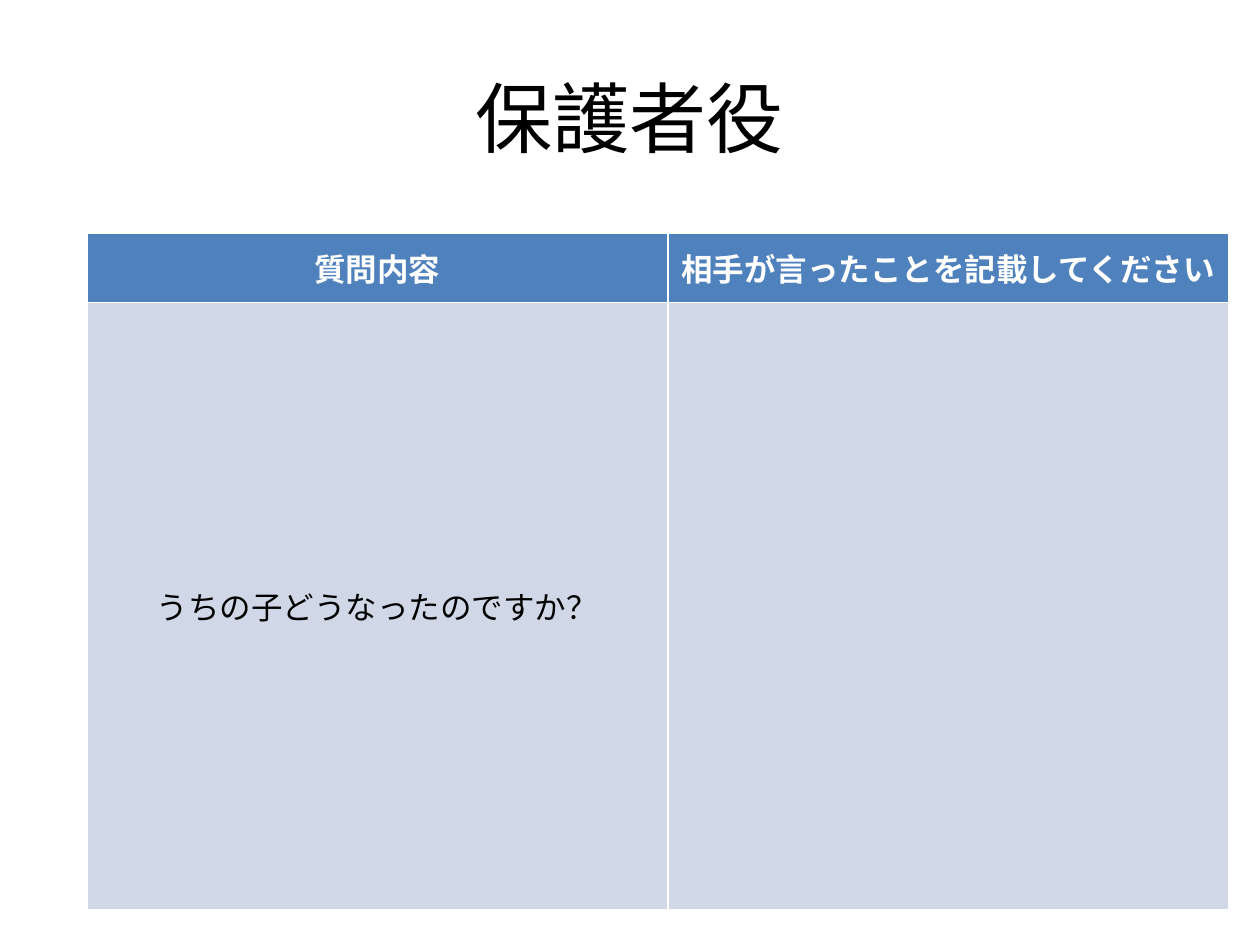
from dataclasses import dataclass

from pptx import Presentation
from pptx.dml.color import RGBColor
from pptx.enum.text import MSO_ANCHOR, PP_ALIGN
from pptx.util import Inches, Pt

TITLE = "保護者役"
ROWS = [
    ("質問内容", "相手が言ったことを記載してください"),
    ("うちの子どうなったのですか？", ""),
]
COLUMN_WIDTHS = (4.61, 4.45)
ROW_HEIGHTS = (0.55, 4.82)
TABLE_LEFT, TABLE_TOP = 0.69, 1.85


@dataclass(frozen=True)
class Theme:
    font: str = "Calibri"
    title_size: int = 44
    table_size: int = 18
    black: str = "000000"
    white: str = "FFFFFF"
    header_fill: str = "4F81BD"
    body_fill: str = "D0D8E8"


THEME = Theme()


def write_text(text_frame, text, *, size, color, bold=False):
    text_frame.word_wrap = True
    paragraph = text_frame.paragraphs[0]
    paragraph.alignment = PP_ALIGN.CENTER
    paragraph.font.size = Pt(size)
    if text:
        run = paragraph.add_run()
        run.text = text
        run.font.name = THEME.font
        run.font.size = Pt(size)
        run.font.bold = bold
        run.font.color.rgb = RGBColor.from_string(color)


def add_title(slide):
    title = slide.shapes.title
    title.left, title.top = Inches(0.5), Inches(0.3)
    title.width, title.height = Inches(9), Inches(1.25)
    title.text_frame.vertical_anchor = MSO_ANCHOR.MIDDLE
    write_text(title.text_frame, TITLE, size=THEME.title_size, color=THEME.black)


def add_question_table(slide):
    """Add the table; its default style draws the white cell borders."""
    table = slide.shapes.add_table(
        len(ROWS), len(COLUMN_WIDTHS), Inches(TABLE_LEFT), Inches(TABLE_TOP),
        Inches(sum(COLUMN_WIDTHS)), Inches(sum(ROW_HEIGHTS)),
    ).table
    for column, width in zip(table.columns, COLUMN_WIDTHS):
        column.width = Inches(width)
    for row_index, (row, height, texts) in enumerate(zip(table.rows, ROW_HEIGHTS, ROWS)):
        row.height = Inches(height)
        is_header = row_index == 0
        for cell, text in zip(row.cells, texts):
            cell.vertical_anchor = MSO_ANCHOR.MIDDLE
            cell.fill.solid()
            cell.fill.fore_color.rgb = RGBColor.from_string(
                THEME.header_fill if is_header else THEME.body_fill)
            write_text(cell.text_frame, text, size=THEME.table_size, bold=is_header,
                       color=THEME.white if is_header else THEME.black)


def main():
    presentation = Presentation()
    presentation.slide_width, presentation.slide_height = Inches(10), Inches(7.5)
    slide = presentation.slides.add_slide(presentation.slide_layouts.get_by_name("Title Only"))
    add_title(slide)
    add_question_table(slide)
    presentation.save("out.pptx")


if __name__ == "__main__":
    main()
